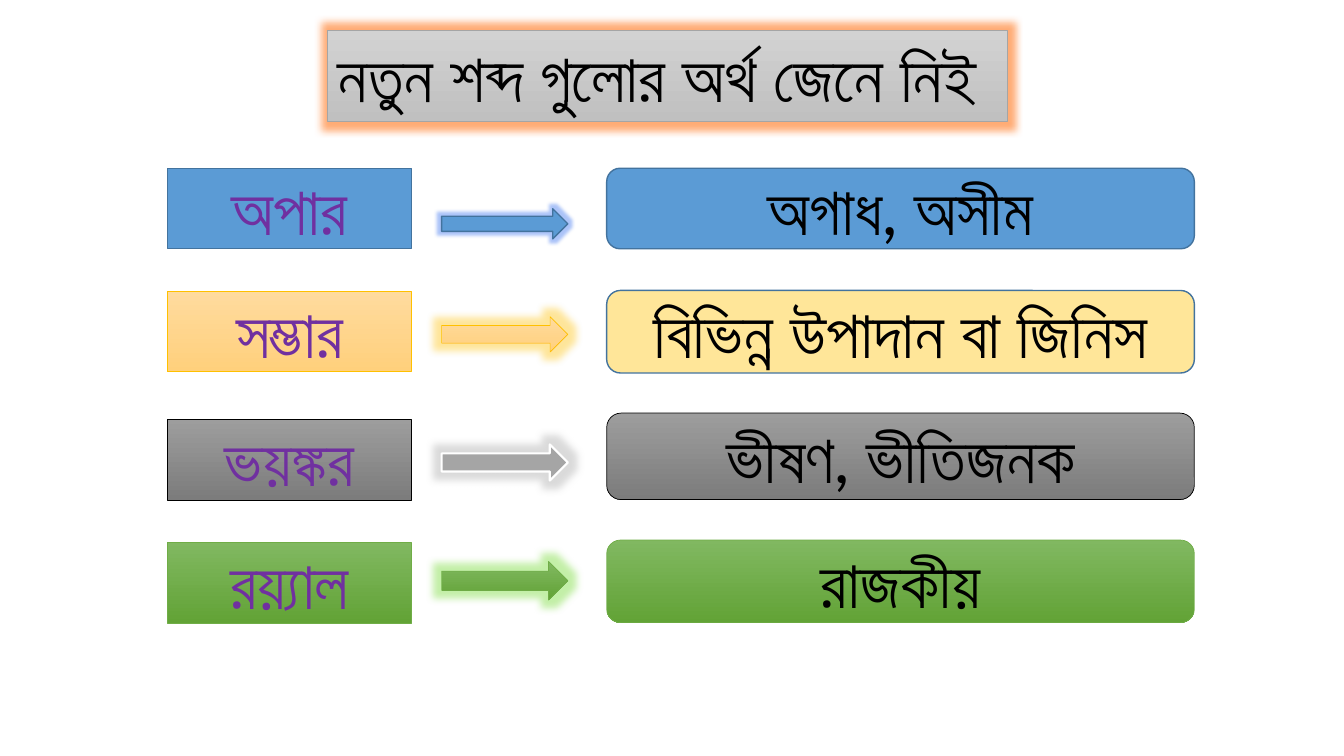
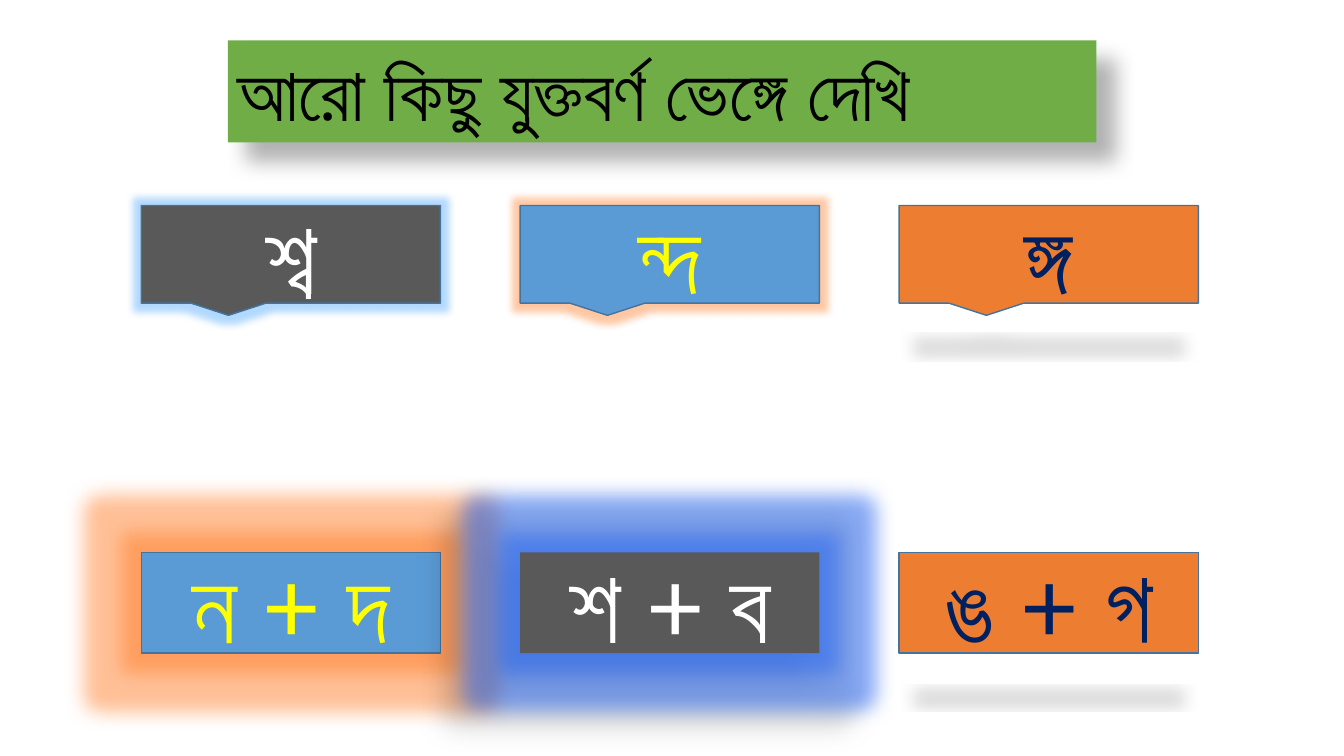
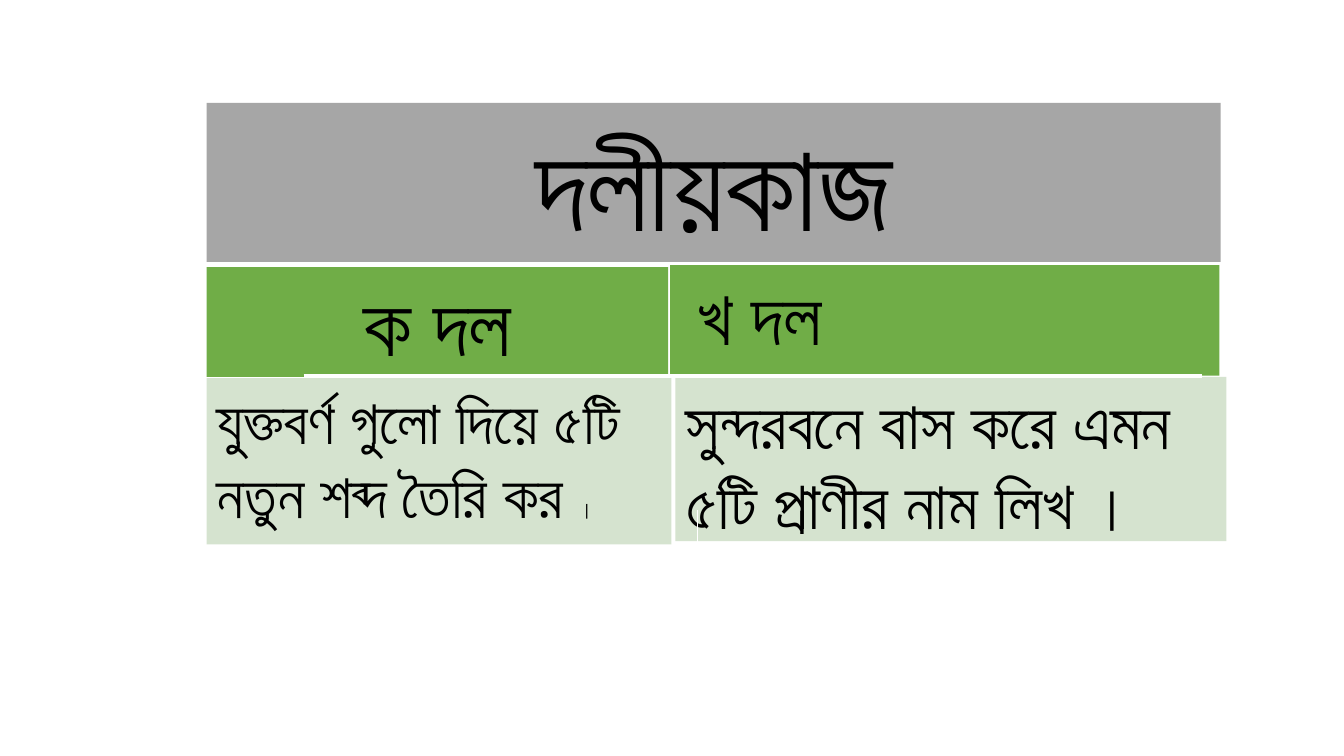
from dataclasses import dataclass
from typing import Optional, Union

import pptx
import pptx.dml.color
import pptx.enum.shapes
import pptx.enum.text
import pptx.oxml
import pptx.oxml.ns
import pptx.util
from lxml import etree

Cm = pptx.util.Cm
Pt = pptx.util.Pt
RGBColor = pptx.dml.color.RGBColor
Kind = pptx.enum.shapes.MSO_SHAPE
Align = pptx.enum.text.PP_ALIGN
Anchor = pptx.enum.text.MSO_ANCHOR

FONT = "Lato"
TITLE_ONLY = 5

BLACK = RGBColor(0x00, 0x00, 0x00)
WHITE = RGBColor(0xFF, 0xFF, 0xFF)
PURPLE = RGBColor(0x70, 0x30, 0xA0)
NAVY = RGBColor(0x00, 0x20, 0x60)
YELLOW = RGBColor(0xFF, 0xFF, 0x00)
BLUE = RGBColor(0x5B, 0x9B, 0xD5)
BLUE_EDGE = RGBColor(0x43, 0x73, 0x9E)
ORANGE = RGBColor(0xED, 0x7D, 0x31)
GOLD = RGBColor(0xFF, 0xC0, 0x00)
PALE_GOLD = RGBColor(0xFF, 0xE6, 0x99)
GREEN = RGBColor(0x70, 0xAD, 0x47)
PALE_GREEN = RGBColor(0xD5, 0xE3, 0xCF)
GREY = RGBColor(0xA5, 0xA5, 0xA5)
BANNER_GREY = RGBColor(0xA6, 0xA6, 0xA6)
DARK_GREY = RGBColor(0x59, 0x59, 0x59)
BLUE_GLOW = RGBColor(0x2E, 0x6B, 0xF0)
SKY_GLOW = RGBColor(0x3F, 0xA0, 0xFF)
ORANGE_GLOW = RGBColor(0xFF, 0x75, 0x1A)
GREEN_GLOW = RGBColor(0x6B, 0xD8, 0x26)


@dataclass(frozen=True)
class Gradient:
    top: RGBColor
    bottom: RGBColor


GOLD_FADE = Gradient(RGBColor(0xFF, 0xDB, 0x9E), RGBColor(0xFF, 0xD0, 0x7C))
GREY_FADE = Gradient(RGBColor(0x9D, 0x9D, 0x9D), RGBColor(0x7C, 0x7C, 0x7C))
GREEN_FADE = Gradient(RGBColor(0x81, 0xB8, 0x61), RGBColor(0x62, 0xA3, 0x36))
SILVER_FADE = Gradient(RGBColor(0xD2, 0xD2, 0xD2), RGBColor(0xC0, 0xC0, 0xC0))


@dataclass(frozen=True)
class Glow:
    color: RGBColor
    radius: float
    opacity: int = 40


@dataclass(frozen=True)
class Shadow:
    opacity: int
    blur: float
    distance: float
    angle: int
    scale_x: int = 100
    scale_y: int = 100


FLOOR_SHADOW = Shadow(15, 12, 25, 90, 90, -19)


@dataclass(frozen=True)
class Look:
    fill: Union[RGBColor, Gradient]
    edge: Optional[RGBColor] = None
    edge_width: float = 1
    glow: Optional[Glow] = None
    shadow: Optional[Shadow] = None


@dataclass(frozen=True)
class Box:
    left: float
    top: float
    width: float
    height: float


@dataclass(frozen=True)
class Span:
    text: str
    size: float
    color: RGBColor = BLACK


@dataclass(frozen=True)
class WordRow:
    word: str
    meaning: str
    word_top: float
    arrow_top: float
    arrow_height: float
    meaning_top: float
    meaning_height: float
    word_look: Look
    arrow_look: Look
    meaning_look: Look


@dataclass(frozen=True)
class Tile:
    text: str
    color: RGBColor
    look: Look


@dataclass(frozen=True)
class GroupCell:
    box: Box
    fill: RGBColor
    spans: list[Span]
    align: Align = Align.LEFT
    margin_left: float = 0.25


def add_effect(effects, tag: str, color: RGBColor, opacity: int, **attributes: int) -> None:
    effect = etree.SubElement(effects, pptx.oxml.ns.qn(tag))
    for name, value in attributes.items():
        effect.set(name, str(value))
    tint = etree.SubElement(effect, pptx.oxml.ns.qn("a:srgbClr"), val=str(color))
    etree.SubElement(tint, pptx.oxml.ns.qn("a:alpha"), val=str(opacity * 1000))


def apply_look(shape, look: Look) -> None:
    if isinstance(look.fill, Gradient):
        shape.fill.gradient()
        shape.fill.gradient_angle = 270
        for stop, color in zip(shape.fill.gradient_stops, (look.fill.top, look.fill.bottom)):
            stop.color.rgb = color
    else:
        shape.fill.solid()
        shape.fill.fore_color.rgb = look.fill
    if look.edge is None:
        shape.line.fill.background()
    else:
        shape.line.color.rgb = look.edge
        shape.line.width = Pt(look.edge_width)

    shape.shadow.inherit = False
    effects = shape._element.spPr.find(pptx.oxml.ns.qn("a:effectLst"))
    if look.glow:
        add_effect(effects, "a:glow", look.glow.color, look.glow.opacity, rad=Pt(look.glow.radius))
    if look.shadow:
        cast = look.shadow
        add_effect(effects, "a:outerShdw", BLACK, cast.opacity,
                   blurRad=Pt(cast.blur), dist=Pt(cast.distance), dir=cast.angle * 60000,
                   sx=cast.scale_x * 1000, sy=cast.scale_y * 1000, rotWithShape=0)


def write(shape, spans: list[Span], align: Align, anchor: Anchor) -> None:
    frame = shape.text_frame
    frame.word_wrap = True
    frame.auto_size = pptx.enum.text.MSO_AUTO_SIZE.NONE
    frame.vertical_anchor = anchor
    paragraph = frame.paragraphs[0]
    paragraph.alignment = align
    for span in spans:
        run = paragraph.add_run()
        run.text = span.text
        run.font.size = Pt(span.size)
        run.font.color.rgb = span.color
        run.font.name = FONT
        # Bengali takes its font from the complex-script slot.
        etree.SubElement(run.font._element, pptx.oxml.ns.qn("a:cs"), typeface=FONT)


def add_block(slide, kind: Kind, box: Box, look: Look):
    block = slide.shapes.add_shape(kind, Cm(box.left), Cm(box.top), Cm(box.width), Cm(box.height))
    apply_look(block, look)
    return block


def add_label(slide, kind: Kind, box: Box, look: Look, span: Span) -> None:
    write(add_block(slide, kind, box, look), [span], Align.CENTER, Anchor.MIDDLE)


def add_rule(slide, start: tuple[float, float], end: tuple[float, float], width: float) -> None:
    rule = slide.shapes.add_connector(pptx.enum.shapes.MSO_CONNECTOR.STRAIGHT,
                                      *(Cm(value) for value in start + end))
    rule.line.color.rgb = WHITE
    rule.line.width = Pt(width)
    etree.SubElement(rule._element.spPr, pptx.oxml.ns.qn("a:effectLst"))


def add_titled_slide(deck, box: Box, look: Look, span: Span, align: Align = Align.LEFT):
    slide = deck.slides.add_slide(deck.slide_layouts[TITLE_ONLY])
    title = slide.shapes.title
    title.left, title.top = Cm(box.left), Cm(box.top)
    title.width, title.height = Cm(box.width), Cm(box.height)
    apply_look(title, look)
    write(title, [span], align, Anchor.TOP)
    return slide


def build_word_meanings(deck) -> None:
    slide = add_titled_slide(
        deck, Box(8.26, 0.76, 17.12, 2.31),
        Look(SILVER_FADE, GREY, 0.5, Glow(ORANGE_GLOW, 11, 60)),
        Span("নতুন শব্দ গুলোর অর্থ জেনে নিই", 48))
    blue = Look(BLUE, BLUE_EDGE)
    gold = Look(GOLD_FADE, GOLD, 0.5)
    grey = Look(GREY_FADE, BLACK, 0.5)
    green = Look(GREEN_FADE, GREEN, 0.5)
    rows = [
        WordRow("অপার", "অগাধ, অসীম", 4.24, 5.26, 0.76, 4.24, 2.03,
                blue, Look(BLUE, BLUE_EDGE, 1, Glow(BLUE_GLOW, 5)), blue),
        WordRow("সম্ভার", "বিভিন্ন উপাদান বা জিনিস", 7.34, 7.98, 0.89, 7.32, 2.08,
                gold, Look(GOLD_FADE, GOLD, 0.5, Glow(GOLD, 11)), Look(PALE_GOLD, BLUE_EDGE)),
        WordRow("ভয়ঙ্কর", "ভীষণ, ভীতিজনক", 10.57, 11.2, 0.91, 10.41, 2.18,
                grey, Look(GREY, WHITE, 1.5, Glow(GREY, 11)), grey),
        WordRow("রয়্যাল", "রাজকীয়", 13.67, 14.15, 0.97, 13.61, 2.08,
                green, Look(GREEN_FADE, GREEN, 0.5, Glow(GREEN_GLOW, 11)), green),
    ]
    for row in rows:
        add_label(slide, Kind.RECTANGLE, Box(4.22, row.word_top, 6.15, 2.03),
                  row.word_look, Span(row.word, 48, PURPLE))
        add_block(slide, Kind.RIGHT_ARROW, Box(11.13, row.arrow_top, 3.18, row.arrow_height),
                  row.arrow_look)
        add_label(slide, Kind.ROUNDED_RECTANGLE,
                  Box(15.29, row.meaning_top, 14.81, row.meaning_height),
                  row.meaning_look, Span(row.meaning, 48))


def build_conjuncts(deck) -> None:
    slide = add_titled_slide(
        deck, Box(5.74, 1.02, 21.89, 2.57),
        Look(GREEN, shadow=Shadow(30, 15, 18, 45)),
        Span("আরো কিছু যুক্তবর্ণ ভেঙ্গে দেখি", 54))
    on_floor = Look(ORANGE, BLUE_EDGE, shadow=FLOOR_SHADOW)
    conjuncts = [
        Tile("শ্ব", WHITE, Look(DARK_GREY, BLUE_EDGE, glow=Glow(SKY_GLOW, 11))),
        Tile("ন্দ", YELLOW, Look(BLUE, BLUE_EDGE, glow=Glow(ORANGE_GLOW, 11))),
        Tile("ঙ্গ", NAVY, on_floor),
    ]
    parts = [
        Tile("ন + দ", YELLOW, Look(BLUE, BLUE_EDGE, glow=Glow(ORANGE_GLOW, 28, 45))),
        Tile("শ + ব", WHITE, Look(DARK_GREY, glow=Glow(BLUE_GLOW, 28, 55),
                                  shadow=Shadow(28, 11.8, 19.7, 141))),
        Tile("ঙ + গ", NAVY, on_floor),
    ]
    for kind, top, height, tiles in (
        (Kind.RECTANGULAR_CALLOUT, 5.18, 2.46, conjuncts),
        (Kind.RECTANGLE, 13.92, 2.54, parts),
    ):
        for column, tile in enumerate(tiles):
            add_label(slide, kind, Box(3.56 + 9.55 * column, top, 7.54, height),
                      tile.look, Span(tile.text, 72, tile.color))


def build_group_work(deck) -> None:
    slide = add_titled_slide(deck, Box(5.21, 2.59, 25.55, 4.01), Look(BANNER_GREY),
                             Span("দলীয়কাজ", 88), Align.CENTER)
    cells = [
        GroupCell(Box(5.21, 6.73, 11.63, 2.77), GREEN, [Span("ক দল", 60)], Align.CENTER),
        GroupCell(Box(16.89, 6.68, 13.84, 2.79), GREEN, [Span("খ দল", 54)], margin_left=0.68),
        GroupCell(Box(5.21, 9.53, 11.71, 4.19), PALE_GREEN,
                  [Span("যুক্তবর্ণ গুলো দিয়ে ৫টি নতুন শব্দ তৈরি কর ", 44), Span("।", 18)]),
        GroupCell(Box(17.02, 9.5, 13.89, 4.14), PALE_GREEN,
                  [Span("সুন্দরবনে বাস করে এমন ৫টি প্রাণীর নাম লিখ ।", 48)]),
    ]
    for cell in cells:
        block = add_block(slide, Kind.RECTANGLE, cell.box, Look(cell.fill))
        block.text_frame.margin_left = Cm(cell.margin_left)
        write(block, cell.spans, cell.align, Anchor.TOP)
    add_rule(slide, (17.58, 12.85), (17.58, 14.96), 1)
    add_rule(slide, (7.65, 9.47), (30.28, 9.47), 3)


def main() -> None:
    deck = pptx.Presentation()
    deck.slide_width, deck.slide_height = Cm(33.87), Cm(19.05)
    build_word_meanings(deck)
    build_conjuncts(deck)
    build_group_work(deck)
    deck.save("out.pptx")


if __name__ == "__main__":
    main()
